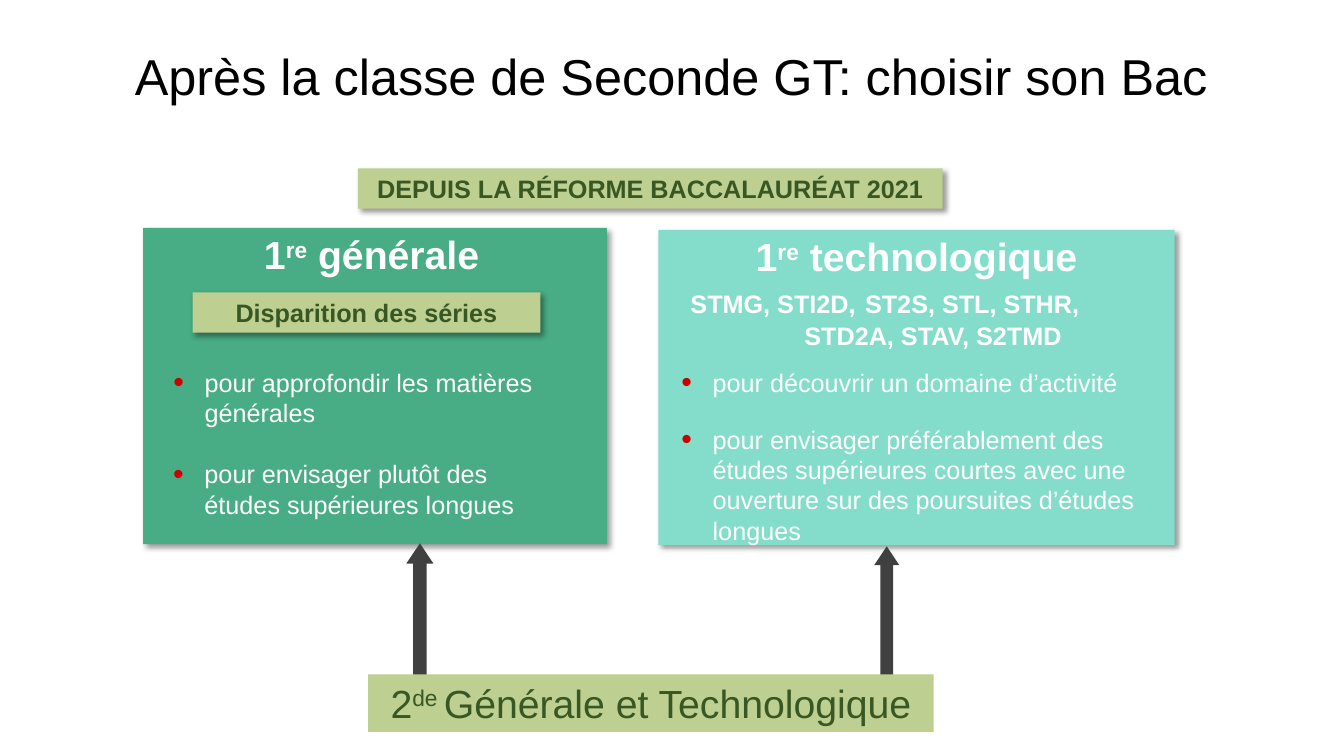
import pptx
import pptx.util
import pptx.dml.color
import pptx.enum.shapes
import pptx.enum.text
import pptx.oxml
import pptx.oxml.ns
from lxml import etree

Inches, Pt = pptx.util.Inches, pptx.util.Pt
SHAPE = pptx.enum.shapes.MSO_SHAPE
ALIGN = pptx.enum.text.PP_ALIGN
ANCHOR = pptx.enum.text.MSO_ANCHOR
qn = pptx.oxml.ns.qn

COLORS = {
    "black": "000000", "white": "FFFFFF", "general": "48AC84",
    "techno": "83DDCA", "label": "BDCF91", "label_text": "385723",
    "arrow": "404040", "bullet": "CC0000",
}


def rgb(name):
    return pptx.dml.color.RGBColor.from_string(COLORS[name])


def add_shadow(s):
    effects = s._element.spPr.find(qn("a:effectLst"))
    shadow = etree.SubElement(effects, qn("a:outerShdw"), blurRad=str(Pt(4)),
                              dist=str(Pt(3)), dir="2700000",
                              algn="tl", rotWithShape="0")
    color = etree.SubElement(shadow, qn("a:srgbClr"), val=COLORS["black"])
    etree.SubElement(color, qn("a:alpha"), val="40000")


def add_block(slide, box, fill, shadow=False, kind=SHAPE.RECTANGLE):
    s = slide.shapes.add_shape(kind, *map(Inches, box))
    s.shadow.inherit = False
    s.fill.solid()
    s.fill.fore_color.rgb = rgb(fill)
    s.line.fill.background()
    if shadow:
        add_shadow(s)
    return s


def add_arrow(slide, box):
    s = add_block(slide, box, "arrow", kind=SHAPE.UP_ARROW)
    s.adjustments[0], s.adjustments[1] = 0.5, 0.75


def write(p, runs, color, bold=False, align=ALIGN.LEFT):
    """Each run is (text, size) or (text, size, True) for superscript."""
    p.alignment = align
    for text, size, *raised in runs:
        r = p.add_run()
        r.text = text
        r.font.name = "Arial"
        r.font.size = Pt(size)
        r.font.bold = bold
        r.font.color.rgb = rgb(color)
        if raised:
            r._r.get_or_add_rPr().set("baseline", "30000")


def set_indent(p, left, first=0):
    pPr = p._p.get_or_add_pPr()
    pPr.set("marL", str(Inches(left)))
    pPr.set("indent", str(Inches(first)))


def add_label(slide, box, runs, bold=True, shadow=True):
    tf = add_block(slide, box, "label", shadow).text_frame
    tf.word_wrap = True
    tf.vertical_anchor = ANCHOR.TOP
    write(tf.paragraphs[0], runs, "label_text", bold, ALIGN.CENTER)


def add_text(slide, box, runs, color="white", bold=False, align=ALIGN.CENTER):
    tf = slide.shapes.add_textbox(*map(Inches, box)).text_frame
    tf.word_wrap = True
    write(tf.paragraphs[0], runs, color, bold, align)
    return tf


def add_bullet(slide, box, text):
    p = add_text(slide, box, [(text, 18)], align=ALIGN.LEFT).paragraphs[0]
    set_indent(p, 0.31, -0.31)
    pPr = p._p.get_or_add_pPr()
    color = etree.SubElement(pPr, qn("a:buClr"))
    etree.SubElement(color, qn("a:srgbClr"), val=COLORS["bullet"])
    etree.SubElement(pPr, qn("a:buSzPct"), val="120000")
    etree.SubElement(pPr, qn("a:buFont"), typeface="Arial")
    etree.SubElement(pPr, qn("a:buChar"), char="•")


def main():
    prs = pptx.Presentation()
    prs.slide_width, prs.slide_height = Inches(13.33), Inches(7.5)
    slide = prs.slides.add_slide(prs.slide_layouts[6])

    # Title
    add_text(slide, (0.53, 0.4, 12.26, 0.71),
             [("Après la classe de Seconde GT: choisir son Bac", 36)], "black")

    # Panels and the arrows leading to them
    add_block(slide, (1.42, 2.26, 4.6, 3.14), "general", shadow=True)
    add_block(slide, (6.53, 2.28, 5.12, 3.13), "techno", shadow=True)
    add_arrow(slide, (4.03, 5.39, 0.27, 1.53))
    add_arrow(slide, (8.67, 5.42, 0.25, 1.52))

    # General stream
    add_text(slide, (2.52, 2.24, 2.4, 0.57),
             [("1", 28), ("re", 28, True), (" générale", 28)],
             bold=True, align=ALIGN.LEFT)
    add_bullet(slide, (1.62, 3.59, 4.01, 0.74),
               "pour approfondir les matières générales")
    add_bullet(slide, (1.62, 4.5, 4.07, 0.71),
               "pour envisager plutôt des études supérieures longues")

    # Technological stream
    tf = add_text(slide, (6.53, 2.26, 5.12, 1.28),
                  [("1", 28), ("re", 28, True), (" technologique", 28)],
                  bold=True)
    series = [
        (0.22, [("STMG, STI2D,", 18), (" ", 24), ("ST2S, STL, STHR,", 18)]),
        (1.35, [("STD2A, STAV, S2TMD", 18)]),
    ]
    for left, runs in series:
        p = tf.add_paragraph()
        write(p, runs, "white", bold=True)
        set_indent(p, left)
    add_bullet(slide, (6.66, 3.59, 5.04, 0.4),
               "pour découvrir un domaine d’activité")
    add_bullet(slide, (6.66, 4.16, 4.89, 1.31),
               "pour envisager préférablement des études supérieures courtes "
               "avec une ouverture sur des poursuites d’études longues")

    # Labels
    add_label(slide, (3.65, 6.69, 5.61, 0.57),
              [("2", 28), ("de ", 28, True), ("Générale et Technologique", 28)],
              bold=False, shadow=False)
    add_label(slide, (3.55, 1.67, 5.8, 0.4),
              [("DEPUIS LA RÉFORME BACCALAURÉAT 2021", 18)])
    add_label(slide, (1.91, 2.9, 3.45, 0.4), [("Disparition des séries", 18)])

    prs.save("out.pptx")


if __name__ == "__main__":
    main()
